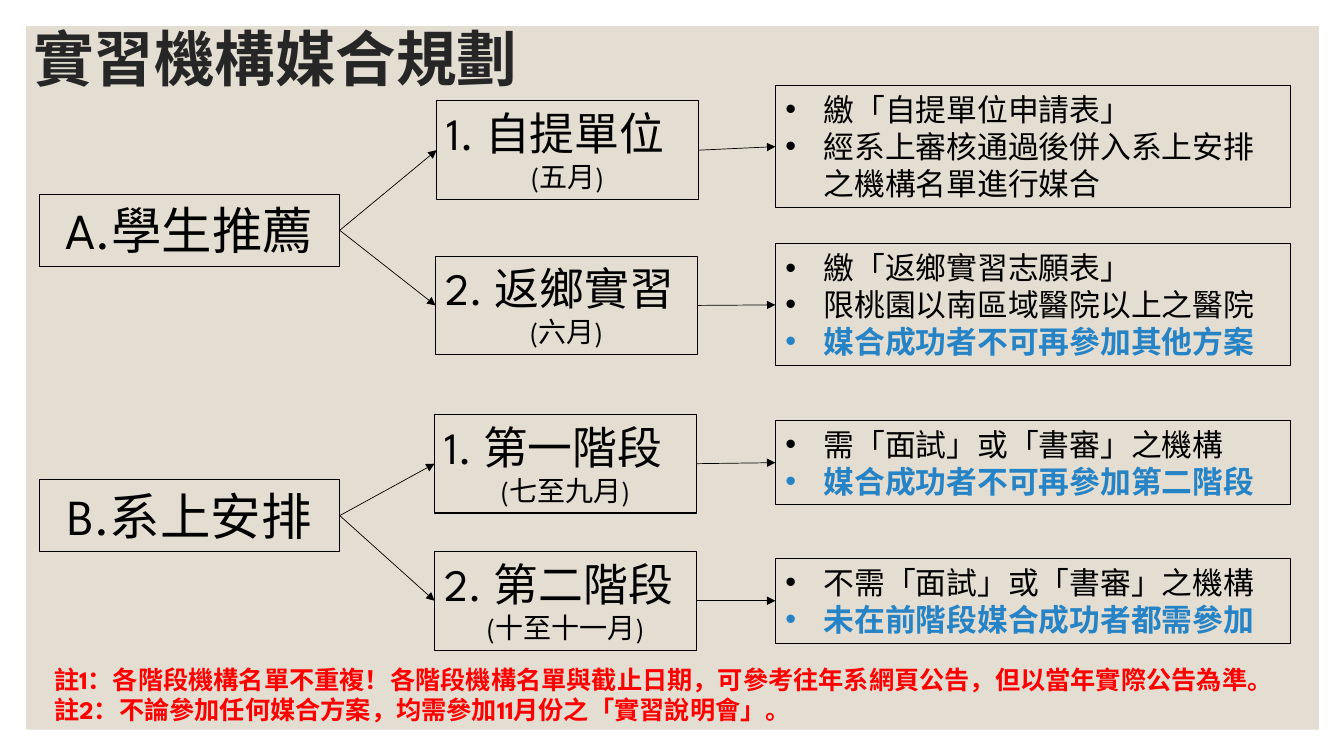
"""Builds the slide on how internship institutions are matched with students."""
from lxml.etree import SubElement
from pptx import Presentation
from pptx.dml.color import RGBColor
from pptx.enum.shapes import MSO_CONNECTOR, MSO_SHAPE
from pptx.enum.text import MSO_ANCHOR, MSO_AUTO_SIZE, PP_ALIGN
from pptx.oxml.ns import qn
from pptx.util import Pt

TITLE = "實習機構媒合規劃"
PLANS = [
    {"name": "A.學生推薦", "top": 193, "stages": [
        {"name": "1. 自提單位", "month": "(五月)", "at": (433, 100),
         "rules": ["繳「自提單位申請表」",
                   "經系上審核通過後併入系上安排之機構名單進行媒合"],
         "limit": None, "rules_top": 85, "rules_height": 121},
        {"name": "2. 返鄉實習", "month": "(六月)", "at": (432, 254),
         "rules": ["繳「返鄉實習志願表」", "限桃園以南區域醫院以上之醫院"],
         "limit": "媒合成功者不可再參加其他方案",
         "rules_top": 242, "rules_height": 121},
    ]},
    {"name": "B.系上安排", "top": 476, "stages": [
        {"name": "1. 第一階段", "month": "(七至九月)", "at": (431, 411),
         "rules": ["需「面試」或「書審」之機構"],
         "limit": "媒合成功者不可再參加第二階段",
         "rules_top": 417, "rules_height": 84},
        {"name": "2. 第二階段", "month": "(十至十一月)", "at": (431, 547),
         "rules": ["不需「面試」或「書審」之機構"],
         "limit": "未在前階段媒合成功者都需參加",
         "rules_top": 554, "rules_height": 84},
    ]},
]
NOTES = [
    "註1：各階段機構名單不重複！各階段機構名單與截止日期，可參考往年系網頁公告，但以當年實際公告為準。",
    "註2：不論參加任何媒合方案，均需參加11月份之「實習說明會」。",
]

COLORS = {"panel": "E3DED1", "title": "262626", "ink": "000000",
          "limit": "2683C6", "note": "FF0000"}
FONT = "League Spartan"
PX = 9144
LEFT, RIGHT = 1, 3
INDENT = 38


def px(*lengths):
    return [length * PX for length in lengths]


def color(name):
    return RGBColor.from_string(COLORS[name])


def write(frame, lines):
    """Fill a frame with (text, size, colour, bold, alignment) lines."""
    for index, (text, size, ink, bold, align) in enumerate(lines):
        paragraph = frame.paragraphs[0] if index == 0 else frame.add_paragraph()
        paragraph.text = text
        paragraph.alignment = align
        font = paragraph.font
        font.name, font.size, font.bold = FONT, Pt(size), bold
        font.color.rgb = color(ink)


def add_box(slide, at, lines):
    box = slide.shapes.add_shape(MSO_SHAPE.RECTANGLE, *px(*at))
    box.shadow.inherit = False
    box.fill.background()
    box.line.color.rgb = color("ink")
    box.line.width = Pt(0.75)
    frame = box.text_frame
    frame.word_wrap = True
    frame.auto_size = MSO_AUTO_SIZE.SHAPE_TO_FIT_TEXT
    frame.vertical_anchor = MSO_ANCHOR.TOP
    write(frame, lines)
    return box


def add_bullets(frame):
    for paragraph in frame.paragraphs:
        properties = paragraph._p.get_or_add_pPr()
        properties.set("marL", str(INDENT * PX))
        properties.set("indent", str(-INDENT * PX))
        bullet = properties.makeelement(qn("a:buChar"), {"char": "•"})
        typeface = properties.makeelement(qn("a:buFont"), {"typeface": "Arial"})
        properties.insert(0, typeface)
        typeface.addnext(bullet)


def add_arrow(slide, source, target):
    arrow = slide.shapes.add_connector(MSO_CONNECTOR.STRAIGHT, 0, 0, 0, 0)
    arrow.begin_connect(source, RIGHT)
    arrow.end_connect(target, LEFT)
    arrow.line.color.rgb = color("ink")
    arrow.line.width = Pt(0.5)
    SubElement(arrow.line._get_or_add_ln(), qn("a:tailEnd"), type="triangle")
    SubElement(arrow._element.spPr, qn("a:effectLst"))


def add_stage(slide, plan_box, stage):
    stage_box = add_box(slide, (*stage["at"], 260, 98), [
        (stage["name"], 32, "ink", False, PP_ALIGN.LEFT),
        (stage["month"], 20, "ink", False, PP_ALIGN.CENTER)])
    rules = [(rule, 22, "ink", False, PP_ALIGN.LEFT) for rule in stage["rules"]]
    if stage["limit"]:
        rules.append((stage["limit"], 22, "limit", True, PP_ALIGN.LEFT))
    rules_box = add_box(
        slide, (769, stage["rules_top"], 511, stage["rules_height"]), rules)
    add_bullets(rules_box.text_frame)
    add_arrow(slide, plan_box, stage_box)
    add_arrow(slide, stage_box, rules_box)


def add_heading(slide):
    title = slide.shapes.title
    title.left, title.top, title.width, title.height = px(23, 22, 706, 79)
    title.text_frame.auto_size = MSO_AUTO_SIZE.NONE
    title.text_frame.vertical_anchor = MSO_ANCHOR.MIDDLE
    write(title.text_frame, [(TITLE, 43.2, "title", True, PP_ALIGN.LEFT)])
    title.text_frame.paragraphs[0].line_spacing = 0.9

    panel = slide.shapes.add_shape(MSO_SHAPE.RECTANGLE, *px(26, 26, 1282, 698))
    panel.shadow.inherit = False
    panel.fill.solid()
    panel.fill.fore_color.rgb = color("panel")
    panel.line.fill.background()
    title._element.addprevious(panel._element)


def add_notes(slide):
    frame = slide.shapes.add_textbox(*px(44, 654, 1297, 71)).text_frame
    frame.word_wrap = False
    frame.auto_size = MSO_AUTO_SIZE.SHAPE_TO_FIT_TEXT
    write(frame, [(note, 18, "note", True, PP_ALIGN.LEFT) for note in NOTES])


def main():
    deck = Presentation()
    deck.slide_width, deck.slide_height = px(1333, 750)
    slide = deck.slides.add_slide(deck.slide_layouts[5])
    add_heading(slide)
    for plan in PLANS:
        plan_box = add_box(slide, (39, plan["top"], 298, 71), [
            (plan["name"], 36, "ink", False, PP_ALIGN.CENTER)])
        for stage in plan["stages"]:
            add_stage(slide, plan_box, stage)
    add_notes(slide)
    deck.save("out.pptx")


if __name__ == "__main__":
    main()
